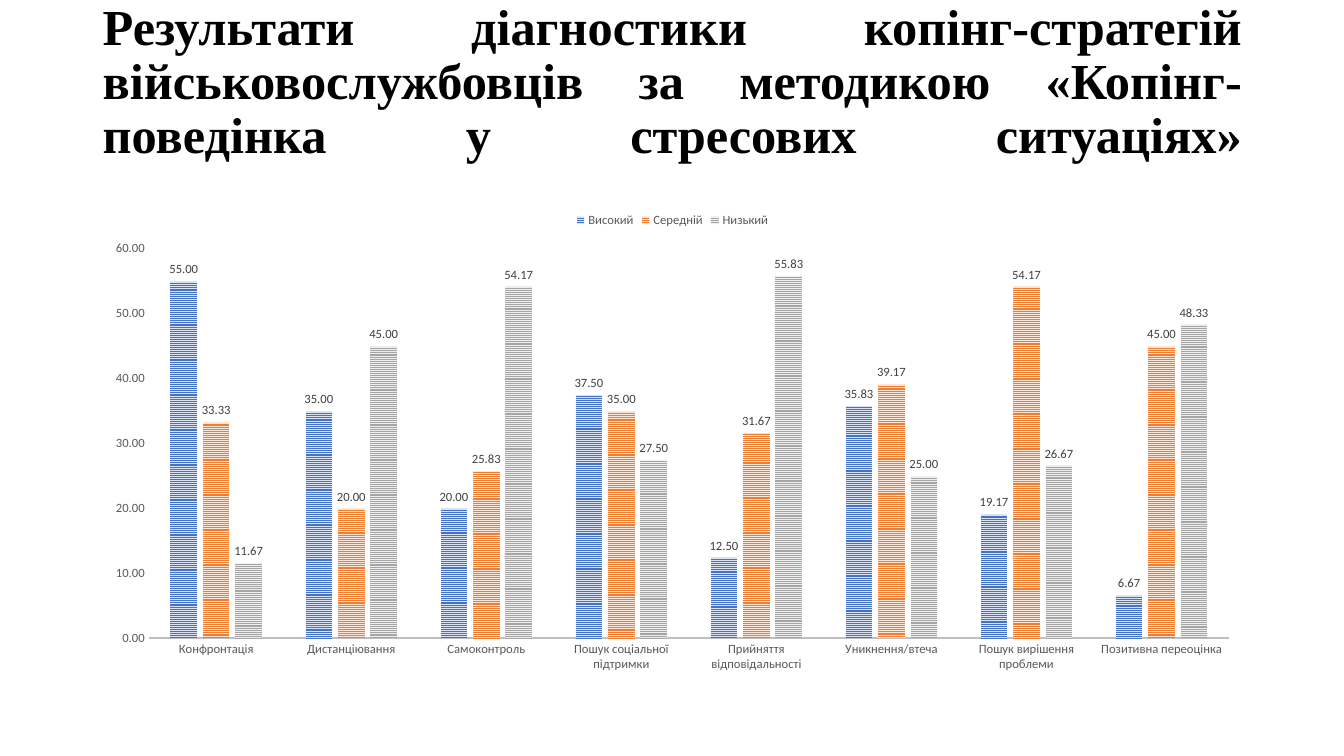
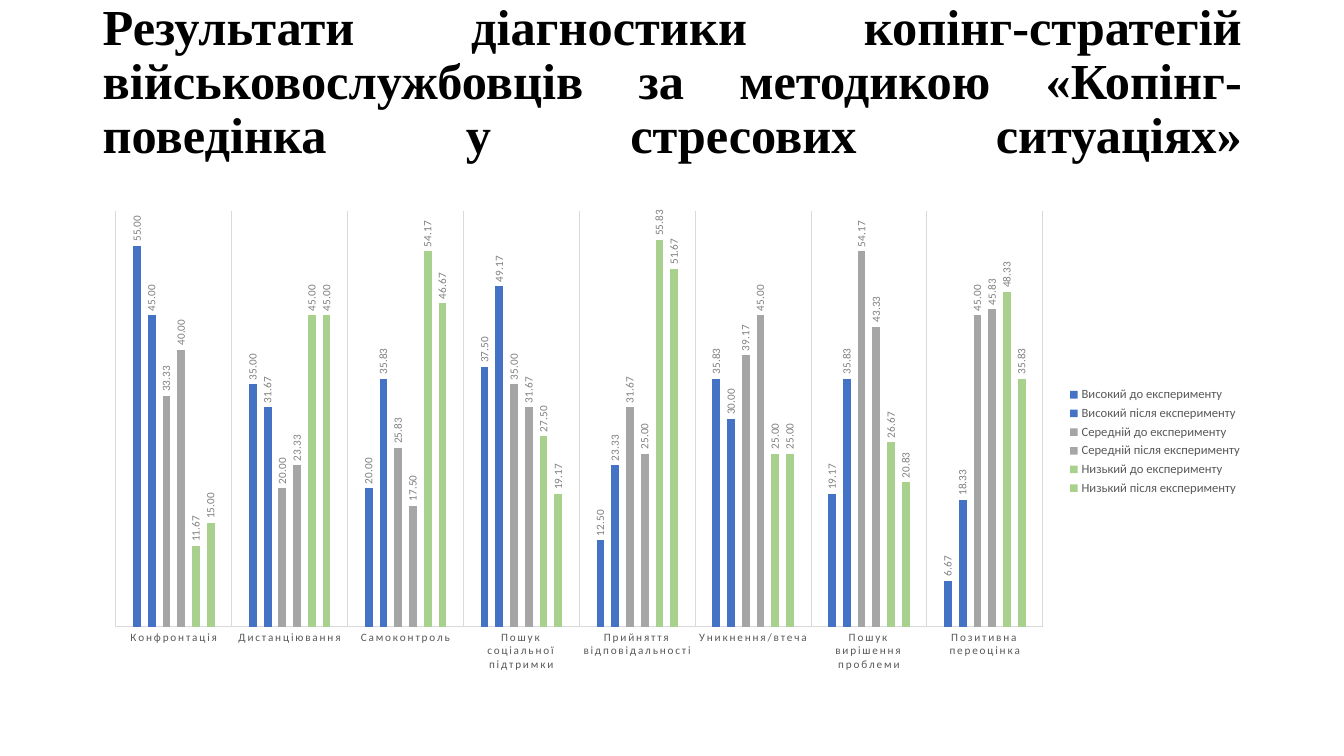
from dataclasses import dataclass

from pptx import Presentation
from pptx.chart.axis import CategoryAxis, ValueAxis
from pptx.chart.chart import Chart
from pptx.chart.data import CategoryChartData
from pptx.chart.series import BarSeries
from pptx.dml.color import RGBColor
from pptx.dml.fill import FillFormat
from pptx.dml.line import LineFormat
from pptx.enum.chart import XL_CHART_TYPE as ChartType
from pptx.enum.chart import XL_LABEL_POSITION as LabelPos
from pptx.enum.chart import XL_LEGEND_POSITION as LegendPos
from pptx.enum.chart import XL_TICK_MARK as TickMark
from pptx.enum.dml import MSO_PATTERN as Pattern
from pptx.enum.text import MSO_ANCHOR as Anchor
from pptx.enum.text import PP_ALIGN as Align
from pptx.oxml.ns import qn
from pptx.slide import Slide
from pptx.text.text import Font
from pptx.util import Inches, Pt

TITLE = (
    "Результати діагностики копінг-стратегій військовослужбовців "
    "за методикою «Копінг-поведінка у стресових ситуаціях»"
)
TITLE_FONT = "Times New Roman"
CHART_FONT = "Calibri"
BLACK = "000000"
AXIS_TEXT = "595959"
NUMBER_FORMAT = "0.00"
LEFT, WIDTH = Inches(0.92), Inches(11.5)

STRATEGIES = (
    "Конфронтація",
    "Дистанціювання",
    "Самоконтроль",
    "Пошук соціальної підтримки",
    "Прийняття відповідальності",
    "Уникнення/втеча",
    "Пошук вирішення проблеми",
    "Позитивна переоцінка",
)
HIGH_BEFORE = (55, 35, 20, 37.5, 12.5, 35.83, 19.17, 6.67)
HIGH_AFTER = (45, 31.67, 35.83, 49.17, 23.33, 30, 35.83, 18.33)
MEDIUM_BEFORE = (33.33, 20, 25.83, 35, 31.67, 39.17, 54.17, 45)
MEDIUM_AFTER = (40, 23.33, 17.5, 31.67, 25, 45, 43.33, 45.83)
LOW_BEFORE = (11.67, 45, 54.17, 27.5, 55.83, 25, 26.67, 48.33)
LOW_AFTER = (15, 45, 46.67, 19.17, 51.67, 25, 20.83, 35.83)


@dataclass(frozen=True)
class Level:
    name: str
    values: tuple[float, ...]
    color: str
    back: str | None = None


@dataclass(frozen=True)
class ChartStyle:
    gap: int
    overlap: int
    legend: LegendPos
    label_size: float
    label_color: str
    category_size: float
    axis_color: str
    axis_width: float
    label_rotation: int = 0
    category_spacing: int = 0
    separators: bool = False
    show_values_axis: bool = True


LEVELS = (
    Level("Високий", HIGH_BEFORE, "4472C4", "DAE3F3"),
    Level("Середній", MEDIUM_BEFORE, "ED7D31", "FBE5D6"),
    Level("Низький", LOW_BEFORE, "A5A5A5", "EDEDED"),
)
COMPARISON = (
    Level("Високий до експерименту", HIGH_BEFORE, "4472C4"),
    Level("Високий після експерименту", HIGH_AFTER, "4472C4"),
    Level("Середній до експерименту", MEDIUM_BEFORE, "A5A5A5"),
    Level("Середній після експерименту", MEDIUM_AFTER, "A6A6A6"),
    Level("Низький до експерименту", LOW_BEFORE, "A9D18E"),
    Level("Низький після експерименту", LOW_AFTER, "A9D18E"),
)
LEVELS_STYLE = ChartStyle(
    gap=164, overlap=-22, legend=LegendPos.TOP,
    label_size=9, label_color="404040", category_size=9,
    axis_color="BFBFBF", axis_width=1.5,
)
COMPARISON_STYLE = ChartStyle(
    gap=444, overlap=-90, legend=LegendPos.RIGHT,
    label_size=8, label_color="808080", category_size=8,
    axis_color="D9D9D9", axis_width=0.75,
    label_rotation=-90, category_spacing=120,
    separators=True, show_values_axis=False,
)


def rgb(color: str) -> RGBColor:
    return RGBColor.from_string(color)


def set_font(font: Font, name: str, size: float, color: str, bold: bool = False) -> None:
    font.name = name
    font.size = Pt(size)
    font.bold = bold
    font.color.rgb = rgb(color)


def set_line(line: LineFormat, color: str, width: float) -> None:
    line.color.rgb = rgb(color)
    line.width = Pt(width)


def fill_bar(fill: FillFormat, level: Level) -> None:
    if level.back is None:
        fill.solid()
        fill.fore_color.rgb = rgb(level.color)
        return
    fill.patterned()
    fill.pattern = Pattern.NARROW_HORIZONTAL
    fill.fore_color.rgb = rgb(level.color)
    fill.back_color.rgb = rgb(level.back)


def add_title(slide: Slide) -> None:
    tf = slide.shapes.add_textbox(LEFT, Inches(0.4), WIDTH, Inches(1.45)).text_frame
    tf.word_wrap = True
    tf.vertical_anchor = Anchor.MIDDLE
    p = tf.paragraphs[0]
    p.alignment = Align.JUSTIFY
    p.line_spacing = 0.9
    set_font(p.font, TITLE_FONT, 36, BLACK, bold=True)
    p.add_run().text = TITLE
    p.add_line_break()


def style_category_axis(axis: CategoryAxis, style: ChartStyle) -> None:
    axis.major_tick_mark = axis.minor_tick_mark = TickMark.NONE
    set_line(axis.format.line, style.axis_color, style.axis_width)
    font = axis.tick_labels.font
    set_font(font, CHART_FONT, style.category_size, AXIS_TEXT)
    if style.category_spacing:
        font._element.set("spc", str(style.category_spacing))
    axis.has_major_gridlines = style.separators
    if style.separators:
        set_line(axis.major_gridlines.format.line, style.axis_color, style.axis_width)


def style_value_axis(axis: ValueAxis, style: ChartStyle) -> None:
    axis.minimum_scale, axis.maximum_scale, axis.major_unit = 0, 60, 10
    axis.has_major_gridlines = False
    axis.major_tick_mark = axis.minor_tick_mark = TickMark.NONE
    axis.format.line.fill.background()
    axis.tick_labels.number_format = NUMBER_FORMAT
    axis.tick_labels.number_format_is_linked = False
    set_font(axis.tick_labels.font, CHART_FONT, 9, AXIS_TEXT)
    axis.visible = style.show_values_axis


def style_series(series: BarSeries, level: Level, style: ChartStyle) -> None:
    series.invert_if_negative = False
    fill_bar(series.format.fill, level)
    series.format.line.fill.background()
    labels = series.data_labels
    labels.show_value = True
    labels.position = LabelPos.OUTSIDE_END
    labels.number_format = NUMBER_FORMAT
    labels.number_format_is_linked = False
    set_font(labels.font, CHART_FONT, style.label_size, style.label_color)
    if style.label_rotation:
        body = labels._element.find(qn("c:txPr")).find(qn("a:bodyPr"))
        body.set("rot", str(style.label_rotation * 60000))
        body.set("vert", "horz")


def style_legend(chart: Chart, position: LegendPos) -> None:
    chart.has_legend = True
    chart.legend.position = position
    chart.legend.include_in_layout = False
    set_font(chart.legend.font, CHART_FONT, 9, AXIS_TEXT)


def add_level_chart(slide: Slide, levels: tuple[Level, ...], style: ChartStyle) -> None:
    data = CategoryChartData(number_format=NUMBER_FORMAT)
    data.categories = STRATEGIES
    for level in levels:
        data.add_series(level.name, level.values)
    chart = slide.shapes.add_chart(
        ChartType.COLUMN_CLUSTERED, LEFT, Inches(2), WIDTH, Inches(4.76), data
    ).chart
    chart.has_title = False
    set_font(chart.font, CHART_FONT, 10, BLACK)
    style_legend(chart, style.legend)
    style_category_axis(chart.category_axis, style)
    style_value_axis(chart.value_axis, style)
    plot = chart.plots[0]
    plot.vary_by_categories = False
    plot.gap_width = style.gap
    plot.overlap = style.overlap
    for series, level in zip(plot.series, levels):
        style_series(series, level, style)


def main() -> None:
    prs = Presentation()
    prs.slide_width, prs.slide_height = Inches(13.33), Inches(7.5)
    for levels, style in ((LEVELS, LEVELS_STYLE), (COMPARISON, COMPARISON_STYLE)):
        slide = prs.slides.add_slide(prs.slide_layouts[6])
        add_title(slide)
        add_level_chart(slide, levels, style)
    prs.save("out.pptx")


if __name__ == "__main__":
    main()
